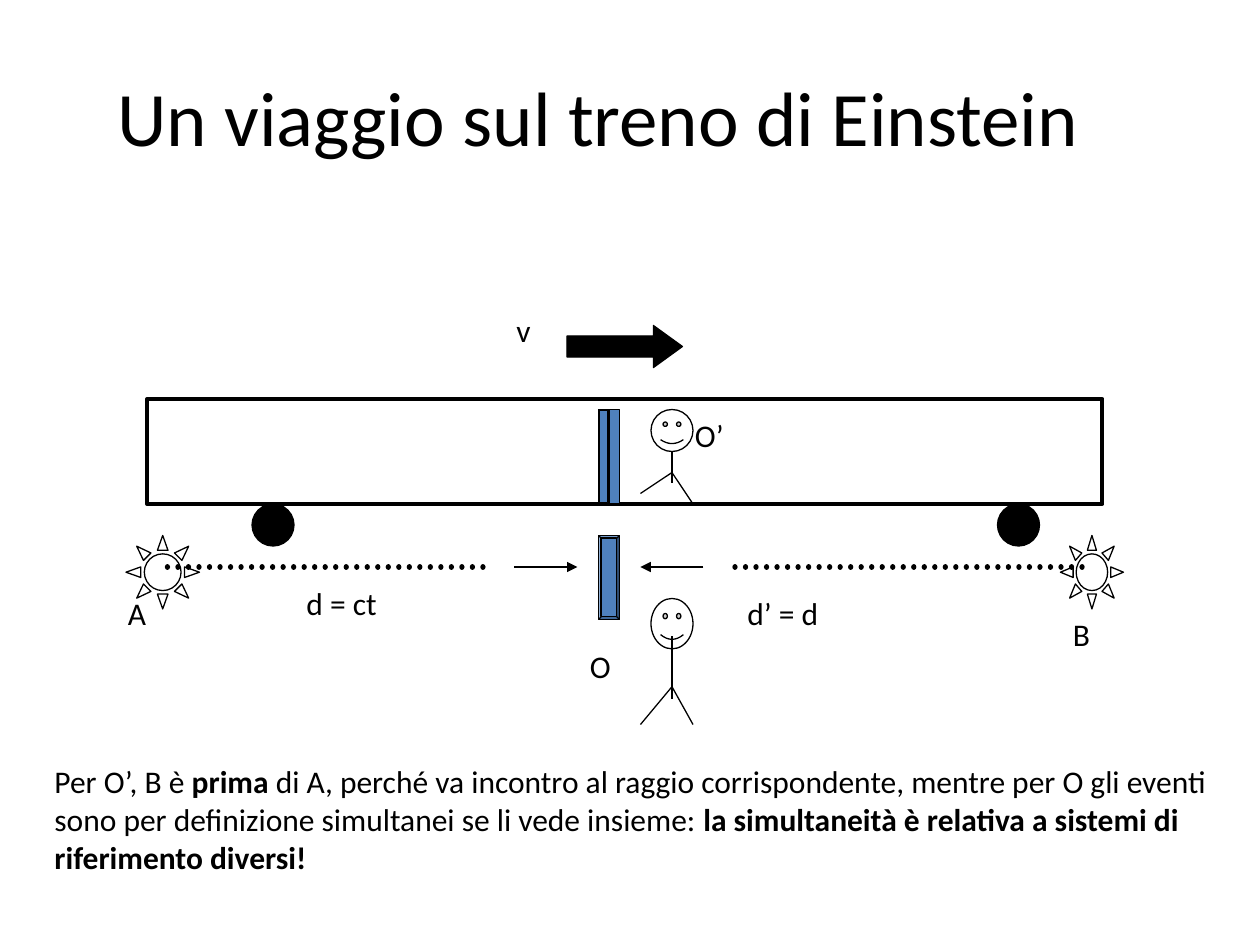
from pptx import Presentation
from pptx.dml.color import RGBColor
from pptx.enum.dml import MSO_LINE
from pptx.enum.shapes import MSO_CONNECTOR, MSO_SHAPE
from pptx.enum.text import MSO_ANCHOR, PP_ALIGN
from pptx.oxml.ns import qn
from pptx.util import Inches, Pt
from lxml.etree import SubElement

COLORS = {"ink": "000000", "paper": "FFFFFF", "mirror": "4F81BD"}
FONT = "Calibri"
GRID = 12  # grid steps per inch; every length below is in grid steps
THIN, TRAIN_LINE, DOTTED_LINE = 0.75, 2.25, 3

TITLE = "Un viaggio sul treno di Einstein"
TITLE_BOX = (4, 6, 106, 10)
CAPTION = [
    ("Per O’, B è ", False),
    ("prima", True),
    (" di A, perché va incontro al raggio corrispondente, mentre per O gli eventi "
     "sono per definizione simultanei se li vede insieme: ", False),
    ("la simultaneità è relativa a sistemi di riferimento diversi!", True),
]
CAPTION_BOX = (4, 72, 116, 15.6)

# kind, (left, top, width, height), fill, line width
SHAPES = [
    (MSO_SHAPE.RECTANGLE, (14, 38, 91, 10), "paper", TRAIN_LINE),
    (MSO_SHAPE.OVAL, (24, 48, 4, 4), "ink", THIN),
    (MSO_SHAPE.OVAL, (95, 48, 4, 4), "ink", THIN),
    (MSO_SHAPE.SUN, (12, 51, 7, 7), "paper", THIN),
    (MSO_SHAPE.SUN, (101, 51, 6, 7), "paper", THIN),
    (MSO_SHAPE.RECTANGLE, (57, 39, 2, 9), "mirror", THIN),
    (MSO_SHAPE.BEVEL, (57, 39, 1, 9), "mirror", THIN),
    (MSO_SHAPE.BEVEL, (57, 51, 2, 8), "mirror", THIN),
    (MSO_SHAPE.RIGHT_ARROW, (54, 31, 11, 4), "ink", THIN),
]
LABELS = [
    ("v", (48, 29, 4, 6)),
    ("d = ct", (28, 55, 14, 6)),
    ("d’ = d", (70, 56, 22, 6)),
    ("A", (11, 56, 5.3, 6)),
    ("B", (101, 58, 7, 6)),
    ("O", (55, 61, 6, 6)),
    ("O’", (65, 39, 10, 6)),
]
RAY_ROW = 54
DOTTED_RAYS = [(70, 104), (46, 15)]
ARROW_RAYS = [(49, 55), (67, 61)]
# head box, then the rows of neck, hip, end of spine and feet
OBSERVER_ON_TRAIN = ((62, 39, 4, 4), 43, 45, 46, (47, 48))
OBSERVER_ON_GROUND = ((62, 57, 4, 4.8), 60.6, 65.4, 66.6, (69, 69))
SPINE_COLUMN, FOOT_COLUMNS = 64, (61, 66)


def color(name):
    return RGBColor.from_string(COLORS[name])


def steps(values):
    return [Inches(value / GRID) for value in values]


def add_outlined(shapes, kind, box, fill, width=THIN):
    shape = shapes.add_shape(kind, *steps(box))
    shape.shadow.inherit = False
    shape.fill.solid()
    shape.fill.fore_color.rgb = color(fill)
    shape.line.color.rgb = color("ink")
    shape.line.width = Pt(width)
    return shape


def add_line(shapes, start, end, width=THIN, dotted=False, arrow=False):
    connector = shapes.add_connector(MSO_CONNECTOR.STRAIGHT, *steps(start + end))
    connector.line.color.rgb = color("ink")
    connector.line.width = Pt(width)
    properties = connector._element.spPr
    outline = properties.find(qn("a:ln"))
    if dotted:
        connector.line.dash_style = MSO_LINE.ROUND_DOT
        outline.set("cap", "rnd")
    if arrow:
        SubElement(outline, qn("a:tailEnd"), type="triangle")
    SubElement(properties, qn("a:effectLst"))


def add_observer(shapes, head, neck, hip, spine_end, foot_rows):
    """Draw a stick figure with a smiling head."""
    add_outlined(shapes, MSO_SHAPE.SMILEY_FACE, head, "paper")
    add_line(shapes, (SPINE_COLUMN, neck), (SPINE_COLUMN, spine_end))
    for foot in zip(FOOT_COLUMNS, foot_rows):
        add_line(shapes, (SPINE_COLUMN, hip), foot)


def write(shape, runs, size):
    frame = shape.text_frame
    frame.word_wrap = True
    frame.vertical_anchor = MSO_ANCHOR.TOP
    paragraph = frame.paragraphs[0]
    for text, bold in runs:
        run = paragraph.add_run()
        run.text = text
        run.font.name = FONT
        run.font.size = Pt(size)
        run.font.bold = bold
        run.font.color.rgb = color("ink")
    return paragraph


def main():
    presentation = Presentation()
    presentation.slide_width, presentation.slide_height = Inches(10), Inches(7.5)
    slide = presentation.slides.add_slide(presentation.slide_layouts[5])
    shapes = slide.shapes

    title = shapes.title
    title.left, title.top, title.width, title.height = steps(TITLE_BOX)
    write(title, [(TITLE, False)], 44).alignment = PP_ALIGN.CENTER

    for kind, box, fill, width in SHAPES:
        shape = add_outlined(shapes, kind, box, fill, width)
        if kind == MSO_SHAPE.RIGHT_ARROW:
            shape.adjustments[1] = 0.69

    add_observer(shapes, *OBSERVER_ON_TRAIN)
    add_observer(shapes.add_group_shape().shapes, *OBSERVER_ON_GROUND)

    for start, end in DOTTED_RAYS:
        add_line(shapes, (start, RAY_ROW), (end, RAY_ROW), DOTTED_LINE, dotted=True)
    for start, end in ARROW_RAYS:
        add_line(shapes, (start, RAY_ROW), (end, RAY_ROW), arrow=True)

    for text, box in LABELS:
        write(shapes.add_textbox(*steps(box)), [(text, False)], 18)
    write(shapes.add_textbox(*steps(CAPTION_BOX)), CAPTION, 18)

    presentation.save("out.pptx")


if __name__ == "__main__":
    main()
